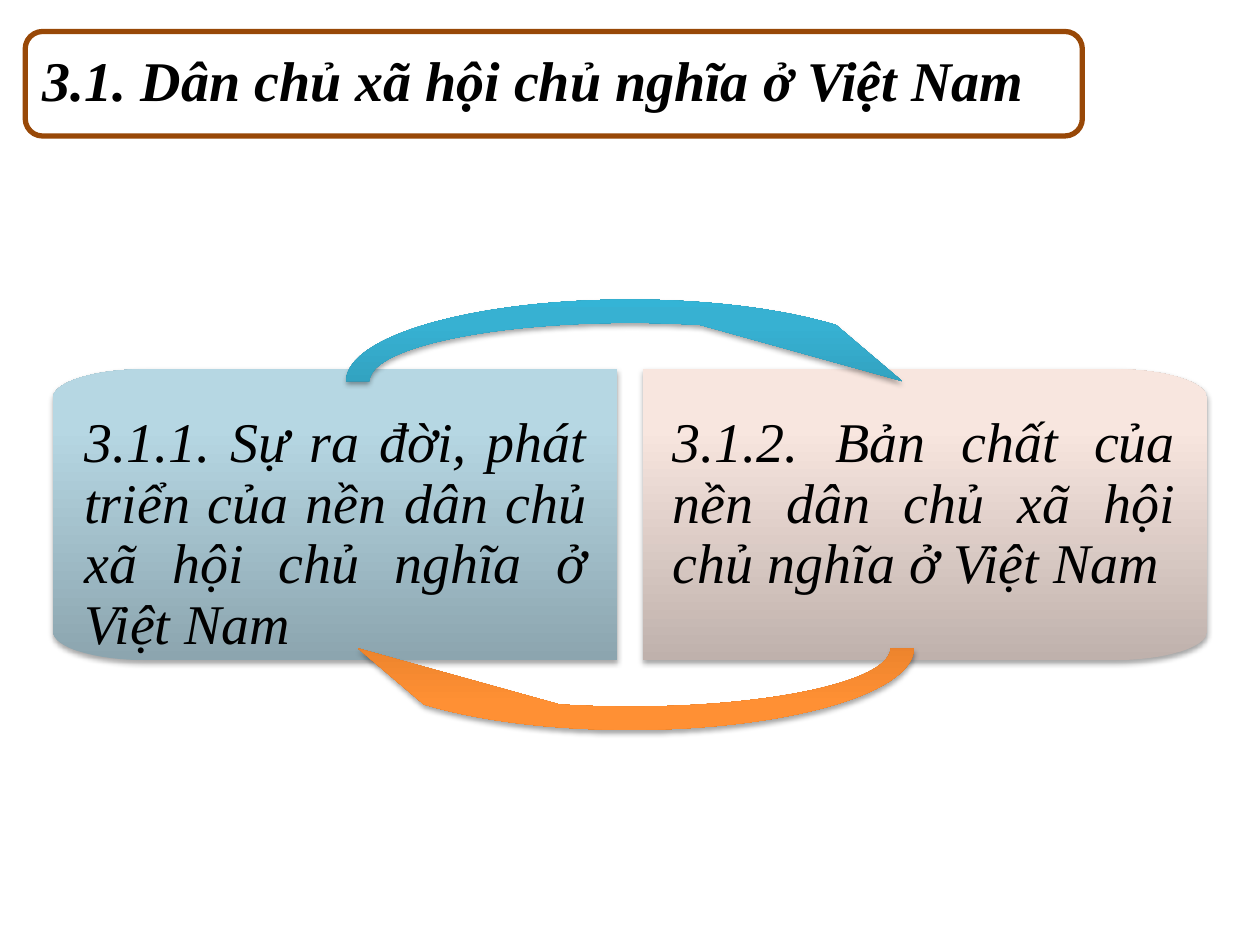
from copy import deepcopy
from math import cos, pi, sin

from lxml.etree import SubElement
from pptx import Presentation
from pptx.dml.color import RGBColor
from pptx.enum.shapes import MSO_SHAPE
from pptx.enum.text import MSO_ANCHOR, PP_ALIGN
from pptx.oxml.ns import qn
from pptx.util import Inches, Pt

WIDE, HIGH = 10, 7.5
EDGE, GAP = 0.42, 0.2
CARD_W, CARD_H = (WIDE - 2 * EDGE - GAP) / 2, 2.31
CARD_Y = 2.93
CURVE_X, CURVE_Y = 0.74, 0.23
ARROW_W, ARROW_H = 4.69, 1.48
ARROW_DY = 1.06  # from the arrow's centre to the middle of the cards


def color(code):
    return RGBColor.from_string(code)


def shade(shape, codes):
    """Fill from bottom to top with three colours."""
    fill = shape.fill
    fill.gradient()
    fill.gradient_angle = 90
    stops = shape._element.spPr.find(qn("a:gradFill")).find(qn("a:gsLst"))
    stops.append(deepcopy(stops[-1]))
    for stop, place, code in zip(fill.gradient_stops, (0, 0.8, 1), codes):
        stop.position = place
        stop.color.rgb = color(code)


def drop(shape):
    """Cast a soft shadow straight down."""
    shape.shadow.inherit = False
    effects = shape._element.spPr.find(qn("a:effectLst"))
    outer = SubElement(effects, qn("a:outerShdw"), blurRad=str(Pt(3.1)),
                       dist=str(Pt(1.8)), dir="5400000", rotWithShape="0")
    black = SubElement(outer, qn("a:srgbClr"), val="000000")
    SubElement(black, qn("a:alpha"), val="35000")


def paint(shape, codes):
    shade(shape, codes)
    shape.line.fill.background()
    drop(shape)


def write(shape, text, anchor, bold=None):
    frame = shape.text_frame
    frame.word_wrap = True
    frame.vertical_anchor = anchor
    par = frame.paragraphs[0]
    par.alignment = PP_ALIGN.JUSTIFY
    par.line_spacing = 0.9
    after = SubElement(par._p.get_or_add_pPr(), qn("a:spcAft"))
    SubElement(after, qn("a:spcPct"), val="35000")
    run = par.add_run()
    run.text = text
    font = run.font
    font.name, font.size = "Times New Roman", Pt(32)
    font.bold, font.italic = bold, True
    font.color.rgb = color("000000")


def add_title(slide, text):
    box = slide.shapes.add_shape(
        MSO_SHAPE.ROUNDED_RECTANGLE,
        Inches(0.2), Inches(0.25), Inches(8.39), Inches(0.83))
    box.shadow.inherit = False
    box.fill.background()
    box.line.color.rgb = color("984807")
    box.line.width = Pt(3)
    write(box, text, MSO_ANCHOR.MIDDLE, True)


def add_card(slide, text, codes, flip):
    """Draw a card with two curved outer corners, mirrored if flip is set."""
    steps = 16
    turns = [pi / 2 * i / steps for i in range(steps + 1)]
    top = [(EDGE + CURVE_X * (1 - cos(t)),
            CARD_Y + CURVE_Y * (1 - sin(t))) for t in turns]
    low = [(x, 2 * CARD_Y + CARD_H - y) for x, y in reversed(top)]
    inner = EDGE + CARD_W
    points = top + [(inner, CARD_Y), (inner, CARD_Y + CARD_H)] + low
    if flip:
        points = [(WIDE - x, y) for x, y in points]
    points = [(Inches(x), Inches(y)) for x, y in points]
    pen = slide.shapes.build_freeform(*points[0])
    pen.add_line_segments(points[1:], close=True)
    card = pen.convert_to_shape()
    paint(card, codes)
    frame = card.text_frame
    frame.margin_left = Inches(0.24 if flip else 0.25)
    frame.margin_right = Inches(0.25 if flip else 0.24)
    frame.margin_top = frame.margin_bottom = Inches(0.36)
    write(card, text, MSO_ANCHOR.TOP)


def add_arrow(slide, codes, side):
    """Draw a bent arrow above (side -1) or below (side 1) the cards."""
    mid = CARD_Y + CARD_H / 2 + side * ARROW_DY
    arrow = slide.shapes.add_shape(
        MSO_SHAPE.CIRCULAR_ARROW,
        Inches((WIDE - ARROW_W) / 2), Inches(mid - ARROW_H / 2),
        Inches(ARROW_W), Inches(ARROW_H))
    for i, value in enumerate((0.125, 11.423, 204.577, 108, 0.125)):
        arrow.adjustments[i] = value
    arrow.rotation = 180 if side > 0 else 0
    paint(arrow, codes)


def main():
    deck = Presentation()
    deck.slide_width, deck.slide_height = Inches(WIDE), Inches(HIGH)
    slide = deck.slides.add_slide(deck.slide_layouts[6])
    add_title(slide, "3.1. Dân chủ xã hội chủ nghĩa ở Việt Nam")
    add_card(slide, "3.1.1. Sự ra đời, phát triển của nền dân chủ "
             "xã hội chủ nghĩa ở Việt Nam",
             ("8CA5AF", "B6D7E3", "B6D8E5"), False)
    add_card(slide, "3.1.2. Bản chất của nền dân chủ "
             "xã hội chủ nghĩa ở Việt Nam",
             ("BFB1AC", "F8E6DF", "FAE7DF"), True)
    add_arrow(slide, ("2A88A2", "37B1D2", "34B4D6"), -1)
    add_arrow(slide, ("CC6E20", "FF9034", "FF9136"), 1)
    deck.save("out.pptx")


if __name__ == "__main__":
    main()
